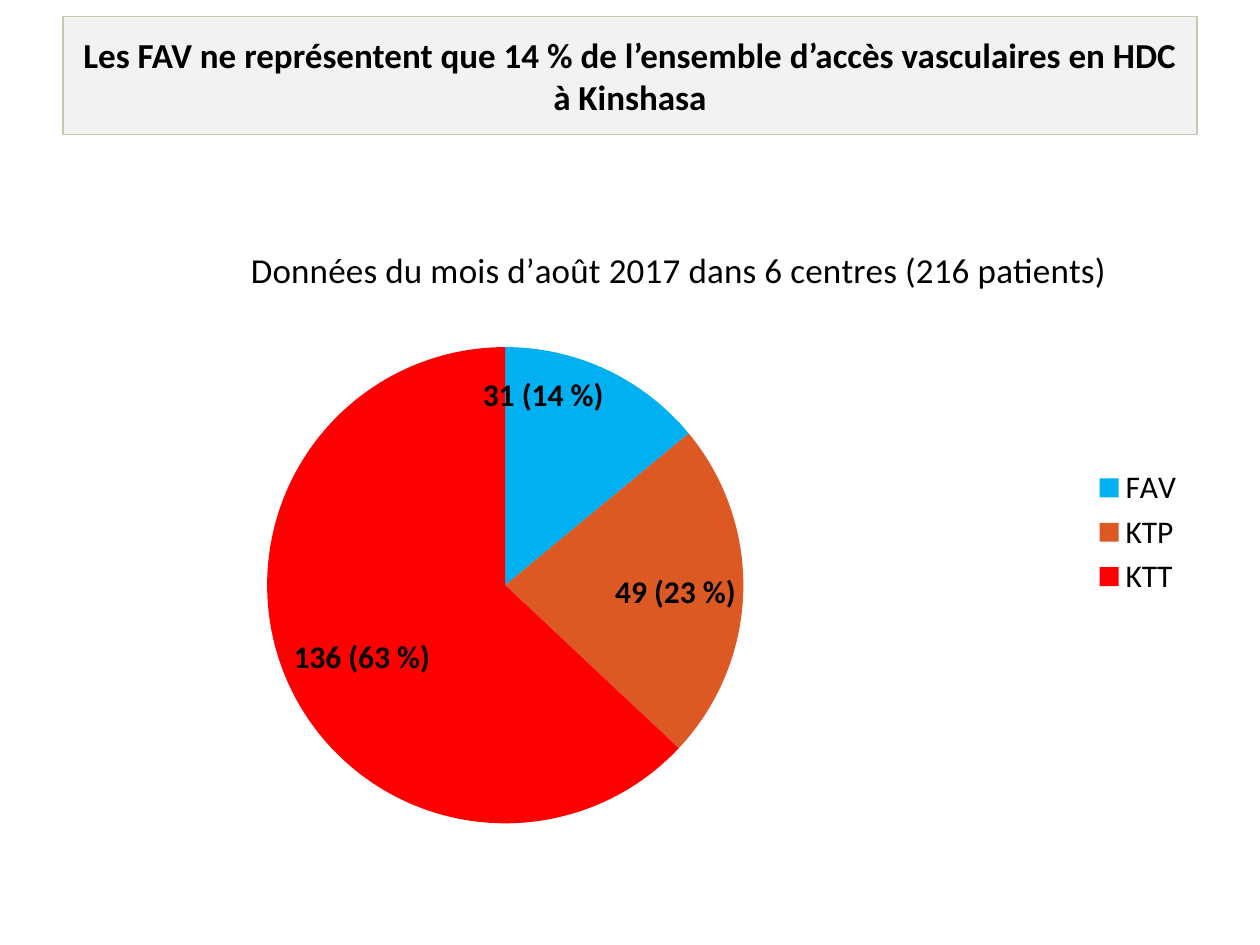
from lxml import etree
from pptx import Presentation
from pptx.chart.data import CategoryChartData
from pptx.dml.color import RGBColor
from pptx.enum.chart import XL_CHART_TYPE, XL_LABEL_POSITION, XL_LEGEND_POSITION
from pptx.enum.shapes import MSO_SHAPE
from pptx.enum.text import MSO_ANCHOR, PP_ALIGN
from pptx.oxml.ns import qn
from pptx.util import Inches, Pt

PIE = XL_CHART_TYPE.PIE
INSIDE_END = XL_LABEL_POSITION.INSIDE_END
LEGEND_RIGHT = XL_LEGEND_POSITION.RIGHT
RECTANGLE = MSO_SHAPE.RECTANGLE
MIDDLE = MSO_ANCHOR.MIDDLE
CENTER = PP_ALIGN.CENTER

HEADLINE = "Les FAV ne représentent que 14 % de l’ensemble d’accès vasculaires en HDC à Kinshasa"
CHART_TITLE = "Données du mois d’août 2017 dans 6 centres (216 patients)"
ACCESS_TYPES = [
    ("FAV", 14, "31 (14 %)", "00B0F0"),
    ("KTP", 23, "49 (23 %)", "DC5924"),
    ("KTT", 63, "136 (63 %)", "FF0000"),
]
HEADLINE_BOX = (0.5, 0.13, 9, 0.94)
CHART_BOX = (0.5, 1.75, 9, 4.95)
TITLE_LAYOUT = {"xMode": "edge", "yMode": "edge", "x": 0.16, "y": 0.03}
PIE_LAYOUT = {"layoutTarget": "inner", "xMode": "edge", "yMode": "edge",
              "x": 0.18, "y": 0.2, "w": 0.42, "h": 0.77}
FORMATS = {
    "headline": {"name": "Calibri", "size": Pt(20), "bold": True},
    "title": {"name": "Calibri", "size": Pt(20), "bold": False},
    "label": {"name": "Calibri", "size": Pt(18), "bold": True},
    "chart": {"name": "Calibri", "size": Pt(18), "bold": False},
}


def color(value):
    return RGBColor.from_string(value)


def format_font(font, style):
    for attribute, value in FORMATS[style].items():
        setattr(font, attribute, value)
    font.color.rgb = color("000000")


def write_text(text_frame, text, style):
    paragraph = text_frame.paragraphs[0]
    run = paragraph.add_run()
    run.text = text
    format_font(run.font, style)
    return paragraph


def set_layout(element, values, following):
    for old_layout in element.findall(qn("c:layout")):
        element.remove(old_layout)
    layout = etree.Element(qn("c:layout"))
    manual = etree.SubElement(layout, qn("c:manualLayout"))
    for name, value in values.items():
        etree.SubElement(manual, qn(f"c:{name}")).set("val", str(value))
    element.find(qn(following)).addprevious(layout)


def add_headline(slide):
    shape = slide.shapes.add_shape(RECTANGLE, *map(Inches, HEADLINE_BOX))
    shape.shadow.inherit = False
    shape.fill.solid()
    shape.fill.fore_color.rgb = color("F2F2F2")
    shape.line.color.rgb = color("C8C8B1")
    shape.line.width = Pt(0.75)
    shape.text_frame.word_wrap = True
    shape.text_frame.vertical_anchor = MIDDLE
    write_text(shape.text_frame, HEADLINE, "headline").alignment = CENTER


def add_pie(slide):
    data = CategoryChartData()
    data.categories = [name for name, *_ in ACCESS_TYPES]
    data.add_series("Series 1", [share for _, share, *_ in ACCESS_TYPES])
    chart = slide.shapes.add_chart(PIE, *map(Inches, CHART_BOX), data).chart
    format_font(chart.font, "chart")

    chart.has_title = True
    title = chart.chart_title
    write_text(title.text_frame, CHART_TITLE, "title")
    title.include_in_layout = False if hasattr(title, "include_in_layout") else None
    set_layout(chart.element.find(".//" + qn("c:title")), TITLE_LAYOUT, "c:overlay")

    chart.has_legend = True
    chart.legend.position = LEGEND_RIGHT
    chart.legend.include_in_layout = False
    format_font(chart.legend.font, "chart")

    plot = chart.plots[0]
    plot.vary_by_categories = True
    set_layout(chart.element.find(".//" + qn("c:plotArea")), PIE_LAYOUT, "c:pieChart")
    for index, (_, _, label_text, fill) in enumerate(ACCESS_TYPES):
        point = plot.series[0].points[index]
        point.format.fill.solid()
        point.format.fill.fore_color.rgb = color(fill)
        write_text(point.data_label.text_frame, label_text, "label")
        point.data_label.position = INSIDE_END


def main():
    presentation = Presentation()
    presentation.slide_width = Inches(10)
    presentation.slide_height = Inches(7.5)
    slide = presentation.slides.add_slide(presentation.slide_layouts[6])
    add_headline(slide)
    add_pie(slide)
    presentation.save("out.pptx")


if __name__ == "__main__":
    main()
